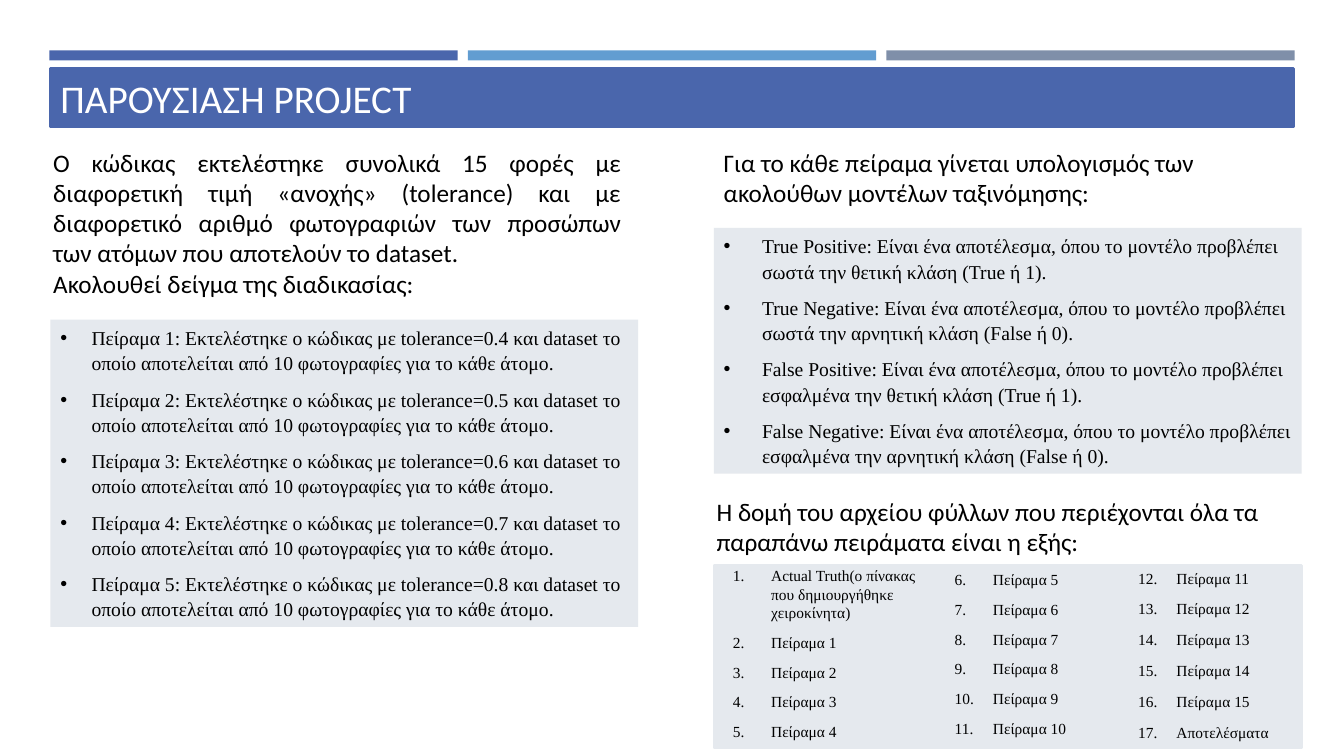
from pptx import Presentation
from pptx.dml.color import RGBColor
from pptx.enum.shapes import MSO_SHAPE
from pptx.enum.text import MSO_ANCHOR, MSO_AUTO_SIZE, PP_ALIGN
from pptx.util import Pt
from lxml import etree

RECT = MSO_SHAPE.RECTANGLE
MIDDLE, TOP = MSO_ANCHOR.MIDDLE, MSO_ANCHOR.TOP
GROW, FIXED = MSO_AUTO_SIZE.SHAPE_TO_FIT_TEXT, MSO_AUTO_SIZE.NONE
LEFT, JUSTIFY = PP_ALIGN.LEFT, PP_ALIGN.JUSTIFY
PX = 9144
A = "{http://schemas.openxmlformats.org/drawingml/2006/main}"
BLUE, PANEL = "4A66AC", "E5E9EE"


def color(fill, value):
    fill.solid()
    fill.fore_color.rgb = RGBColor.from_string(value)


def add_text(box, lines, size, font, indent=0, spacing=1.0, start=0, panel=None):
    tb = s.shapes.add_textbox(*[v * PX for v in box])
    if panel:
        color(tb.fill, panel)
    tf = tb.text_frame
    tf.word_wrap = True
    tf.auto_size = GROW
    tf.vertical_anchor = TOP
    tf.text = "\n".join(lines)
    for p in tf.paragraphs:
        p.alignment = LEFT
        p.line_spacing = spacing
        for r in p.runs:
            r.font.size = Pt(size)
            r.font.name = font
            color(r.font.fill, "000000")
        if indent:
            p.space_after = Pt(8)
            pPr = p._p.get_or_add_pPr()
            pPr.set("marL", str(indent * PX))
            pPr.set("indent", str(-indent * PX))
            if start:
                etree.SubElement(pPr, A + "buAutoNum", type="arabicPeriod", startAt=str(start))
            else:
                etree.SubElement(pPr, A + "buFont", typeface="Arial")
                etree.SubElement(pPr, A + "buChar", char="•")
    return tf


prs = Presentation()
prs.slide_width, prs.slide_height = 1333 * PX, 750 * PX
s = prs.slides.add_slide(prs.slide_layouts[5])

for i, bar_color in enumerate([BLUE, "629DD1", "7F8FA9"]):
    bar = s.shapes.add_shape(RECT, (49 + 415 * i) * PX, 50 * PX, 405 * PX, 10 * PX)
    bar.shadow.inherit = False
    color(bar.fill, bar_color)
    bar.line.fill.background()

title = s.shapes.title
title.left, title.top, title.width, title.height = [v * PX for v in (50, 68, 1233, 58)]
color(title.fill, BLUE)
color(title.line.fill, BLUE)
title.line.width = Pt(1.75)
tf = title.text_frame
tf.text = "ΠΑΡΟΥΣΙΑΣΗ PROJECT"
tf.auto_size = FIXED
tf.vertical_anchor = MIDDLE
p = tf.paragraphs[0]
p.alignment = LEFT
r = p.runs[0]
r.font.size = Pt(28)
r.font.name = "Calibri"
color(r.font.fill, "FFFFFF")

intro = add_text((43, 141, 583, 162), [
    "Ο κώδικας εκτελέστηκε συνολικά 15 φορές με διαφορετική τιμή «ανοχής» (tolerance) "
    "και με διαφορετικό αριθμό φωτογραφιών των προσώπων των ατόμων που αποτελούν το dataset.",
    "Ακολουθεί δείγμα της διαδικασίας:",
], 18, "Calibri")
intro.paragraphs[0].alignment = JUSTIFY

experiments = [
    f"Πείραμα {n}: Εκτελέστηκε ο κώδικας με tolerance=0.{n + 3} και dataset το οποίο "
    "αποτελείται από 10 φωτογραφίες για το κάθε άτομο."
    for n in range(1, 6)
]
add_text((50, 317, 583, 305), experiments, 14, "Times New Roman", 31, 1.07, panel=PANEL)

add_text((708, 141, 583, 71), [
    "Για το κάθε πείραμα γίνεται υπολογισμός των ακολούθων μοντέλων ταξινόμησης:",
], 18, "Calibri")

outcomes = [
    f"{name}: Είναι ένα αποτέλεσμα, όπου το μοντέλο προβλέπει {how} την {label}."
    for name, how, label in [
        ("True Positive", "σωστά", "θετική κλάση (True ή 1)"),
        ("True Negative", "σωστά", "αρνητική κλάση (False ή 0)"),
        ("False Positive", "εσφαλμένα", "θετική κλάση (True ή 1)"),
        ("False Negative", "εσφαλμένα", "αρνητική κλάση (False ή 0)"),
    ]
]
add_text((708, 226, 583, 244), outcomes, 14, "Times New Roman", 38, 1.07, panel=PANEL)

add_text((701, 487, 583, 71), [
    "Η δομή του αρχείου φύλλων που περιέχονται όλα τα παραπάνω πειράματα είναι η εξής:",
], 18, "Calibri")

panel = s.shapes.add_shape(RECT, 708 * PX, 561 * PX, 583 * PX, 181 * PX)
panel.shadow.inherit = False
color(panel.fill, PANEL)
color(panel.line.fill, PANEL)
panel.line.width = Pt(1.75)

sheets = ["Actual Truth(ο πίνακας που δημιουργήθηκε χειροκίνητα)"]
sheets += [f"Πείραμα {n}" for n in range(1, 16)] + ["Αποτελέσματα"]
for box, first, last, spacing in [
    ((717, 557, 213, 185), 1, 5, 1.0),
    ((937, 561, 182, 177), 6, 11, 1.0),
    ((1119, 558, 172, 184), 12, 17, 1.07),
]:
    add_text(box, sheets[first - 1:last], 11, "Times New Roman", 38, spacing, first)

prs.save("out.pptx")
